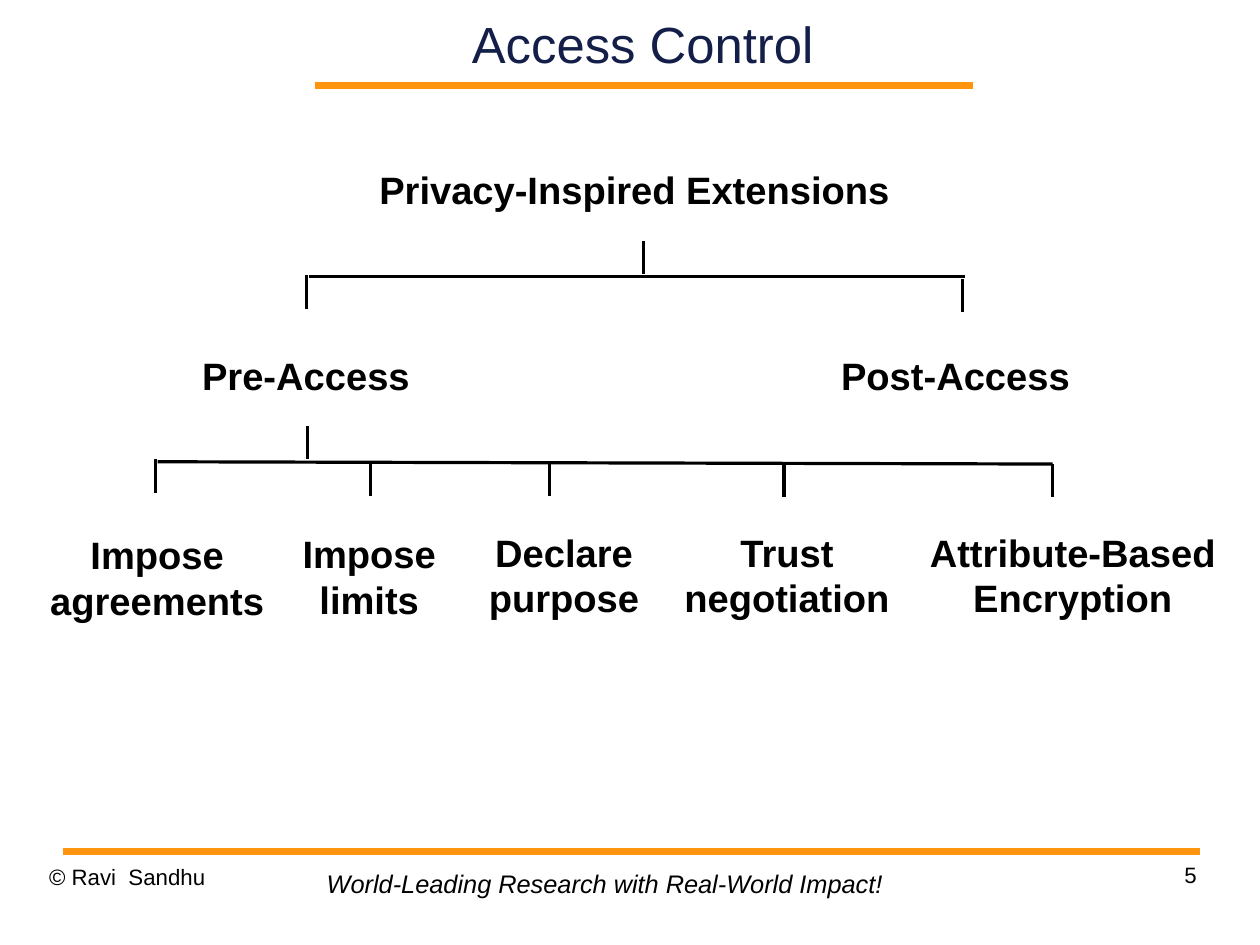
from dataclasses import dataclass

from lxml import etree
from pptx import Presentation
from pptx import util as u
from pptx.dml import color as c
from pptx.enum import shapes, text
from pptx.oxml import ns

FONT = "Arial"
BLACK, NAVY, ORANGE = "000000", "131F49", "FF950E"
LEFT, MID, RIGHT = text.PP_ALIGN.LEFT, text.PP_ALIGN.CENTER, text.PP_ALIGN.RIGHT
DROP = 0.29


@dataclass
class Label:
    words: str
    left: float
    top: float
    width: float
    height: float = 0.5


@dataclass
class Line:
    x1: float
    y1: float
    x2: float
    y2: float
    color: str = BLACK
    weight: float = 2


def paint(value: str) -> c.RGBColor:
    return c.RGBColor.from_string(value)


def write(slide, label: Label, *, size: float = 24, color: str = BLACK,
          bold: bool = False, italic: bool = False, align=LEFT,
          wrap: bool = False, middle: bool = False, inset: bool = True,
          spacing: float = 1.0) -> None:
    box = slide.shapes.add_textbox(u.Inches(label.left), u.Inches(label.top),
                                   u.Inches(label.width), u.Inches(label.height))
    frame = box.text_frame
    frame.word_wrap = wrap
    if not wrap:
        frame.auto_size = text.MSO_AUTO_SIZE.SHAPE_TO_FIT_TEXT
    if middle:
        frame.vertical_anchor = text.MSO_ANCHOR.MIDDLE
    if not inset:
        frame.margin_left = frame.margin_right = 0
        frame.margin_top = frame.margin_bottom = 0
    frame.text = label.words
    for para in frame.paragraphs:
        para.alignment = align
        para.line_spacing = spacing
        for run in para.runs:
            font = run.font
            font.name, font.size = FONT, u.Pt(size)
            font.bold, font.italic = bold, italic
            font.color.rgb = paint(color)


def draw(slide, line: Line) -> None:
    stroke = slide.shapes.add_connector(
        shapes.MSO_CONNECTOR.STRAIGHT, u.Inches(line.x1), u.Inches(line.y1),
        u.Inches(line.x2), u.Inches(line.y2))
    stroke.line.color.rgb = paint(line.color)
    stroke.line.width = u.Pt(line.weight)
    etree.SubElement(stroke._element.spPr, ns.qn("a:effectLst"))


RULES = [
    Line(2.76, 0.75, 8.51, 0.75, ORANGE, 4.31),
    Line(0.55, 7.45, 10.5, 7.45, ORANGE, 4.31),
]
BARS = [Line(8.44, 2.42, 2.7, 2.42), Line(9.21, 4.06, 1.38, 4.04)]
STEMS = [
    (5.63, 2.11), (2.68, 2.41), (8.42, 2.44),
    (2.69, 3.73), (1.36, 4.02), (3.24, 4.05),
    (4.81, 4.05), (6.86, 4.06), (9.21, 4.06),
]
HEADS = [
    Label("Privacy-Inspired Extensions", 3.22, 1.41, 4.71),
    Label("Pre-Access", 1.67, 3.03, 2.04),
    Label("Post-Access", 7.26, 3.03, 2.22),
]
LEAVES = [
    Label("Impose\nagreements", 0.33, 4.6, 2.09, 0.91),
    Label("Impose\nlimits", 2.54, 4.59, 1.38, 0.91),
    Label("Declare\npurpose", 4.17, 4.58, 1.53, 0.91),
    Label("Trust\nnegotiation", 5.88, 4.58, 2.01, 0.91),
    Label("Attribute-Based\nEncryption", 8.02, 4.58, 2.73, 0.91),
]


def main() -> None:
    deck = Presentation()
    deck.slide_width, deck.slide_height = u.Cm(28), u.Cm(21)
    slide = deck.slides.add_slide(deck.slide_layouts[6])
    slide.background.fill.solid()
    slide.background.fill.fore_color.rgb = paint("FFFFFF")

    stems = [Line(x, y, x, y + DROP) for x, y in STEMS]
    for line in RULES + BARS + stems:
        draw(slide, line)

    write(slide, Label("Access Control", 2.41, 0, 6.43, 0.75), size=32,
          color=NAVY, align=MID, wrap=True, middle=True, inset=False)
    for head in HEADS:
        write(slide, head, bold=True)
    for leaf in LEAVES:
        write(slide, leaf, bold=True, align=MID)

    write(slide, Label("© Ravi  Sandhu", 0.43, 7.55, 2.57, 0.57), size=14,
          wrap=True, inset=False, spacing=1.01)
    write(slide, Label("World-Leading Research with Real-World Impact!",
                       2.76, 7.55, 5.08, 0.37), size=16, italic=True)
    write(slide, Label("5", 7.9, 7.53, 2.57, 0.57), size=14, align=RIGHT,
          wrap=True, inset=False, spacing=1.01)
    deck.save("out.pptx")


if __name__ == "__main__":
    main()
